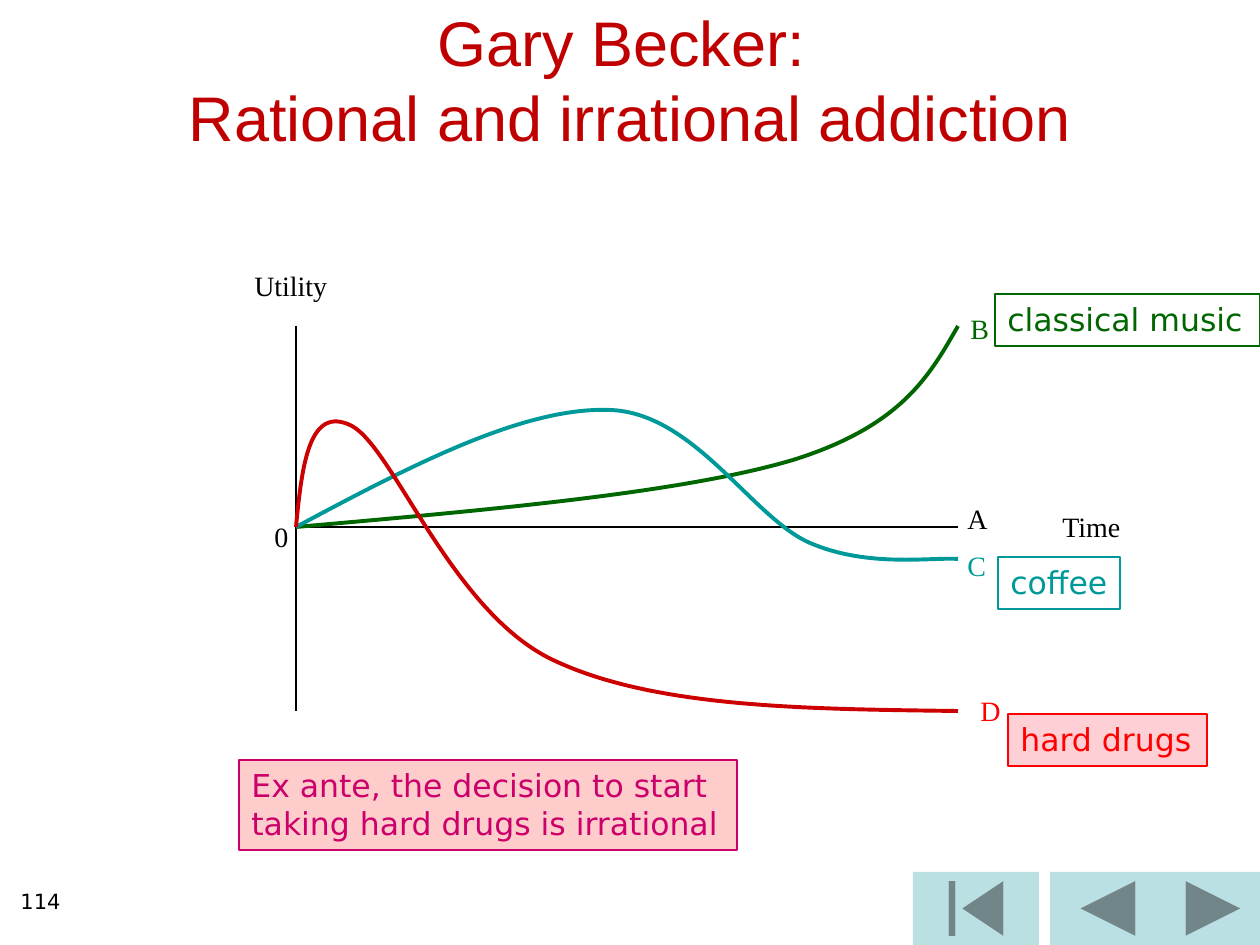
from lxml import etree
from pptx import Presentation
from pptx.dml.color import RGBColor
from pptx.enum.shapes import MSO_CONNECTOR, MSO_SHAPE
from pptx.enum.text import MSO_ANCHOR, MSO_AUTO_SIZE, PP_ALIGN
from pptx.oxml.ns import qn
from pptx.util import Emu, Pt

STRAIGHT = MSO_CONNECTOR.STRAIGHT
RECTANGLE = MSO_SHAPE.RECTANGLE
PREVIOUS = MSO_SHAPE.ACTION_BUTTON_BACK_OR_PREVIOUS
BEGINNING = MSO_SHAPE.ACTION_BUTTON_BEGINNING
NEXT = MSO_SHAPE.ACTION_BUTTON_FORWARD_OR_NEXT
MIDDLE = MSO_ANCHOR.MIDDLE
FIT, FIXED = MSO_AUTO_SIZE.SHAPE_TO_FIT_TEXT, MSO_AUTO_SIZE.NONE
LEFT, CENTER, RIGHT = PP_ALIGN.LEFT, PP_ALIGN.CENTER, PP_ALIGN.RIGHT

PX_PER_INCH = 126
BLACK, GREEN, TEAL, RED = "000000", "006600", "009999", "CC0000"
BRIGHT_RED, MAGENTA, TITLE_RED = "FF0000", "CC006B", "C00000"


def px(length):
    return Emu(round(length * 914400 / PX_PER_INCH))


def color(value):
    return RGBColor.from_string(value)


def write(frame, text, *, font, size, ink, align=LEFT, wrap=True, fit=FIT):
    """Put text into a frame, one paragraph per line, in one format."""
    frame.text = text
    frame.word_wrap = wrap
    frame.auto_size = fit
    for paragraph in frame.paragraphs:
        paragraph.alignment = align
        for run in paragraph.runs:
            run.font.name = font
            run.font.size = Pt(size)
            run.font.color.rgb = color(ink)


class SlideBuilder:
    title_font, label_font, note_font = "Arial", "Times New Roman", "DejaVu Sans"

    def __init__(self, slide):
        self.slide = slide
        self.shapes = slide.shapes

    def title(self, text, box):
        title = self.shapes.title
        title.left, title.top, title.width, title.height = map(px, box)
        title.text_frame.vertical_anchor = MIDDLE
        write(title.text_frame, text, font=self.title_font, size=36,
              ink=TITLE_RED, align=CENTER, fit=FIXED)

    def button(self, kind, box):
        button = self.shapes.add_shape(kind, *map(px, box))
        button.shadow.inherit = False
        button.fill.solid()
        button.fill.fore_color.rgb = color("BBE0E3")
        button.line.fill.background()

    def label(self, text, box, ink=BLACK, wrap=False, **style):
        label = self.shapes.add_textbox(*map(px, box))
        style = {"font": self.label_font, "size": 16, **style}
        write(label.text_frame, text, ink=ink, wrap=wrap, **style)

    def note(self, text, box, ink, fill=None, wrap=True):
        note = self.shapes.add_shape(RECTANGLE, *map(px, box))
        note.shadow.inherit = False
        if fill:
            note.fill.solid()
            note.fill.fore_color.rgb = color(fill)
        else:
            note.fill.background()
        note.line.color.rgb = color(ink)
        note.line.width = Pt(0.75)
        note.text_frame.vertical_anchor = MSO_ANCHOR.TOP
        write(note.text_frame, text, font=self.note_font, size=18, ink=ink, wrap=wrap)

    def axis(self, start, end):
        axis = self.shapes.add_connector(STRAIGHT, *map(px, start + end))
        axis.line.color.rgb = color(BLACK)
        axis.line.width = Pt(0.75)
        etree.SubElement(axis._element.spPr, qn("a:effectLst"))

    def curve(self, points, ink):
        """Draw Bezier segments: a start, then two handles and an end for each."""
        start, *rest = [(px(x), px(y)) for x, y in points]
        builder = self.shapes.build_freeform(*start)
        builder.add_line_segments(rest, close=False)
        curve = builder.convert_to_shape()
        curve.shadow.inherit = False
        curve.fill.background()
        curve.line.color.rgb = color(ink)
        curve.line.width = Pt(2.25)
        # Gather each three straight steps into one cubic segment
        outline = next(curve._element.iter(qn("a:path")))
        steps = outline.findall(qn("a:lnTo"))
        for first in range(0, len(steps), 3):
            cubic = etree.SubElement(outline, qn("a:cubicBezTo"))
            for step in steps[first:first + 3]:
                cubic.append(step[0])
                outline.remove(step)


def main():
    deck = Presentation()
    deck.slide_width, deck.slide_height = px(1260), px(945)
    page = SlideBuilder(deck.slides.add_slide(deck.slide_layouts[5]))

    # Navigation buttons and page number
    for kind, left, width in ((PREVIOUS, 1050, 116), (BEGINNING, 913, 126),
                              (NEXT, 1166, 94)):
        page.button(kind, (left, 872, width, 73))
    page.title("Gary Becker: \vRational and irrational addiction", (0, 0, 1260, 158))
    page.label("114", (0, 882, 73, 63), font=page.note_font, size=12,
               align=RIGHT, wrap=True, fit=FIXED)

    # Axes
    origin, axis_end = (296, 527), 958
    page.label("Utility", (242, 262, 126, 47), wrap=True)
    page.axis((296, 326), (296, 711))
    page.axis(origin, (axis_end, 527))

    # Utility curves over time
    classical_music = [origin, (489, 510), (682, 493), (793, 460),
                       (902, 426), (930, 375), (axis_end, 326)]
    coffee = [origin, (410, 466), (523, 407), (609, 410), (694, 412), (752, 518),
              (810, 543), (868, 568), (932, 557), (axis_end, 559)]
    hard_drugs = [origin, (302, 465), (309, 404), (352, 426), (394, 449), (452, 612),
                  (553, 660), (654, 708), (806, 709), (axis_end, 711)]
    for points, ink in ((classical_music, GREEN), (coffee, TEAL), (hard_drugs, RED)):
        page.curve(points, ink)

    # Letters at the axis and curve ends
    page.label("0", (262, 513, 39, 47))
    page.label("A", (955, 495, 84, 47), wrap=True)
    page.label("D", (968, 687, 45, 47), BRIGHT_RED)
    page.label("B", (958, 305, 44, 47), GREEN)
    page.label("C", (955, 542, 44, 47), TEAL)
    page.label("Time", (1050, 503, 84, 47))

    # Boxed examples and conclusion
    page.note("classical music", (995, 294, 265, 52), GREEN)
    page.note("coffee", (998, 557, 122, 52), TEAL)
    page.note("hard drugs", (1008, 714, 199, 52), BRIGHT_RED, "FFCFD6", wrap=False)
    page.note("Ex ante, the decision to start\ntaking hard drugs is irrational",
              (239, 760, 498, 90), MAGENTA, "FFCCCC", wrap=False)

    deck.save("out.pptx")


if __name__ == "__main__":
    main()
